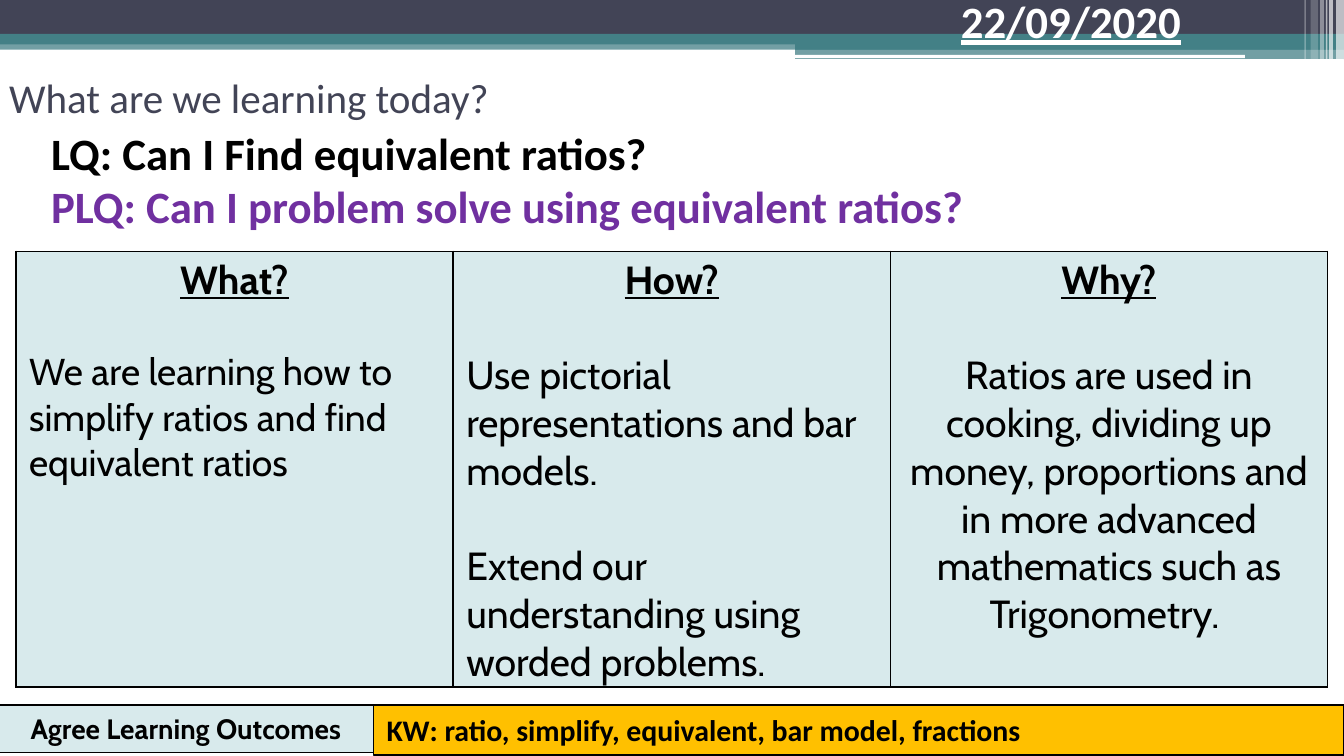
import pptx
import pptx.util
import pptx.dml.color
import pptx.enum.shapes
import pptx.enum.text
import pptx.oxml
import pptx.oxml.ns
from lxml import etree

Cm, Pt = pptx.util.Cm, pptx.util.Pt
RGBColor = pptx.dml.color.RGBColor
SHAPE = pptx.enum.shapes.MSO_SHAPE
ALIGN = pptx.enum.text.PP_ALIGN
ANCHOR = pptx.enum.text.MSO_ANCHOR
qn = pptx.oxml.ns.qn

BLACK = RGBColor(0, 0, 0)
WHITE = RGBColor(0xFF, 0xFF, 0xFF)
NAVY = RGBColor(0x42, 0x44, 0x56)
TEAL = RGBColor(0x43, 0x80, 0x86)
PALE = RGBColor(0xD8, 0xEA, 0xEC)
AMBER = RGBColor(0xFF, 0xC0, 0x00)
PURPLE = RGBColor(0x70, 0x30, 0xA0)

DATE = "22/09/2020"
TITLE = "What are we learning today?"
QUESTIONS = [
    ("LQ: Can I Find equivalent ratios?", BLACK),
    ("PLQ: Can I problem solve using equivalent ratios?", PURPLE),
]
# heading, paragraphs, text size, alignment
COLUMNS = [
    ("What?", ["We are learning how to simplify ratios and find equivalent ratios"], 20, ALIGN.LEFT),
    ("How?", ["Use pictorial representations and bar models.",
              "Extend our understanding using worded problems."], 21, ALIGN.LEFT),
    ("Why?", ["Ratios are used in cooking, dividing up money, proportions and in "
              "more advanced mathematics such as Trigonometry. "], 21, ALIGN.CENTER),
]
FOOTER_LABEL = "Agree Learning Outcomes"
KEYWORDS = "KW: ratio, simplify, equivalent, bar model, fractions"

# left, top, width, height in cm, colour, opacity in percent
BANDS = [
    (0, 0.76, 25.4, 0.18, TEAL, 75),
    (0, 0, 25.4, 0.64, NAVY, 100),
    (0, 0.64, 25.4, 0.2, TEAL, 100),
    (15.03, 0.76, 10.37, 0.18, TEAL, 100),
    (15.03, 0.92, 10.37, 0.38, TEAL, 75),
    (15.02, 1.04, 8.51, 0.06, WHITE, 100),
]
# left, width, height in cm, opacity in percent
STRIPES = [
    (25.25, 0.15, 1.3, 65), (25.12, 0.07, 1.3, 65), (25.06, 0.03, 1.3, 60),
    (24.95, 0.07, 1.3, 40), (24.77, 0.14, 1.21, 20), (24.65, 0.03, 1.21, 30),
]


def place(sp, left, top, width, height):
    sp.left, sp.top, sp.width, sp.height = Cm(left), Cm(top), Cm(width), Cm(height)


def add_run(p, text, size, font, color, bold=False, underline=False):
    r = p.add_run()
    r.text = text
    f = r.font
    f.size, f.name, f.bold, f.underline = Pt(size), font, bold, underline
    f.color.rgb = color


def add_box(s, left, top, width, height, fill, opacity=100, line=None, weight=0.75):
    sp = s.shapes.add_shape(SHAPE.RECTANGLE, Cm(left), Cm(top), Cm(width), Cm(height))
    sp.shadow.inherit = False
    sp.fill.solid()
    sp.fill.fore_color.rgb = fill
    if opacity < 100:
        color = sp.fill._xPr.find(".//" + qn("a:srgbClr"))
        etree.SubElement(color, qn("a:alpha"), val=str(opacity * 1000))
    if line is None:
        sp.line.fill.background()
    else:
        sp.line.color.rgb = line
        sp.line.width = Pt(weight)
    return sp


def add_label(sp, text, size, font, align):
    tf = sp.text_frame
    tf.word_wrap = True
    tf.vertical_anchor = ANCHOR.TOP
    p = tf.paragraphs[0]
    p.alignment = align
    add_run(p, text, size, font, BLACK, bold=True)


def set_borders(cell):
    """Give a cell a thin black line on all four sides."""
    tcPr = cell._tc.get_or_add_tcPr()
    for i, side in enumerate(("lnL", "lnR", "lnT", "lnB")):
        tcPr.insert(i, pptx.oxml.parse_xml(
            f'<a:{side} {pptx.oxml.ns.nsdecls("a")} w="12700"><a:solidFill>'
            f'<a:srgbClr val="{BLACK}"/></a:solidFill></a:{side}>'))


def fill_cell(cell, heading, paragraphs, size, align):
    cell.fill.solid()
    cell.fill.fore_color.rgb = PALE
    set_borders(cell)
    cell.margin_left = cell.margin_right = Cm(0.25)
    cell.margin_top = cell.margin_bottom = Cm(0.1)
    tf = cell.text_frame
    p = tf.paragraphs[0]
    p.alignment = ALIGN.CENTER
    add_run(p, heading, 21, "Cabin", BLACK, bold=True, underline=True)
    for text in paragraphs:
        p = tf.add_paragraph()
        p.alignment = align
        p.space_before = Pt(1.22 * size)  # one line of this size
        add_run(p, text, size, "Cabin", BLACK)


def main():
    prs = pptx.Presentation()
    prs.slide_width, prs.slide_height = Cm(25.4), Cm(14.29)
    s = prs.slides.add_slide(prs.slide_layouts[1])
    title, body = s.placeholders

    for left, top, width, height, color, opacity in BANDS:
        add_box(s, left, top, width, height, color, opacity)
    for left, width, height, opacity in STRIPES:
        add_box(s, left, 0, width, height, WHITE, opacity)
    add_box(s, 14.91, 1.14, 10.49, 0.79, WHITE, line=WHITE, weight=1.5)

    label = add_box(s, -0.05, 13.33, 7.13, 0.9, PALE, line=BLACK)
    add_label(label, FOOTER_LABEL, 15, "Cabin", ALIGN.CENTER)
    keywords = add_box(s, 7.06, 13.33, 18.34, 0.94, AMBER, line=BLACK)
    add_label(keywords, KEYWORDS, 16, "Calibri", ALIGN.LEFT)

    date = s.shapes.add_textbox(Cm(17.91), Cm(-0.25), Cm(7.49), Cm(1.02))
    date.text_frame.word_wrap = True
    add_run(date.text_frame.paragraphs[0], DATE, 24, "Calibri", WHITE, bold=True, underline=True)

    place(title, -0.08, 0.71, 22.86, 2.24)
    tf = title.text_frame
    tf.auto_size = pptx.enum.text.MSO_AUTO_SIZE.NONE
    tf.vertical_anchor = ANCHOR.MIDDLE
    p = tf.paragraphs[0]
    p.alignment = ALIGN.LEFT
    add_run(p, TITLE, 22, "Calibri", NAVY)

    place(body, 0.71, 2.24, 19, 2.31)
    tf = body.text_frame
    tf.auto_size = pptx.enum.text.MSO_AUTO_SIZE.NONE
    for i, (text, color) in enumerate(QUESTIONS):
        p = tf.add_paragraph() if i else tf.paragraphs[0]
        p.space_before = Pt(0)
        pPr = p._p.get_or_add_pPr()
        pPr.set("marL", "0")
        pPr.set("indent", "0")
        etree.SubElement(pPr, qn("a:buNone"))
        add_run(p, text, 24, "Calibri", color, bold=True)

    table = s.shapes.add_table(1, len(COLUMNS), Cm(0.3), Cm(4.75), Cm(24.79), Cm(8.18)).table
    table.first_row = table.horz_banding = False
    for cell, column in zip(table.rows[0].cells, COLUMNS):
        fill_cell(cell, *column)

    prs.save("out.pptx")


if __name__ == "__main__":
    main()
